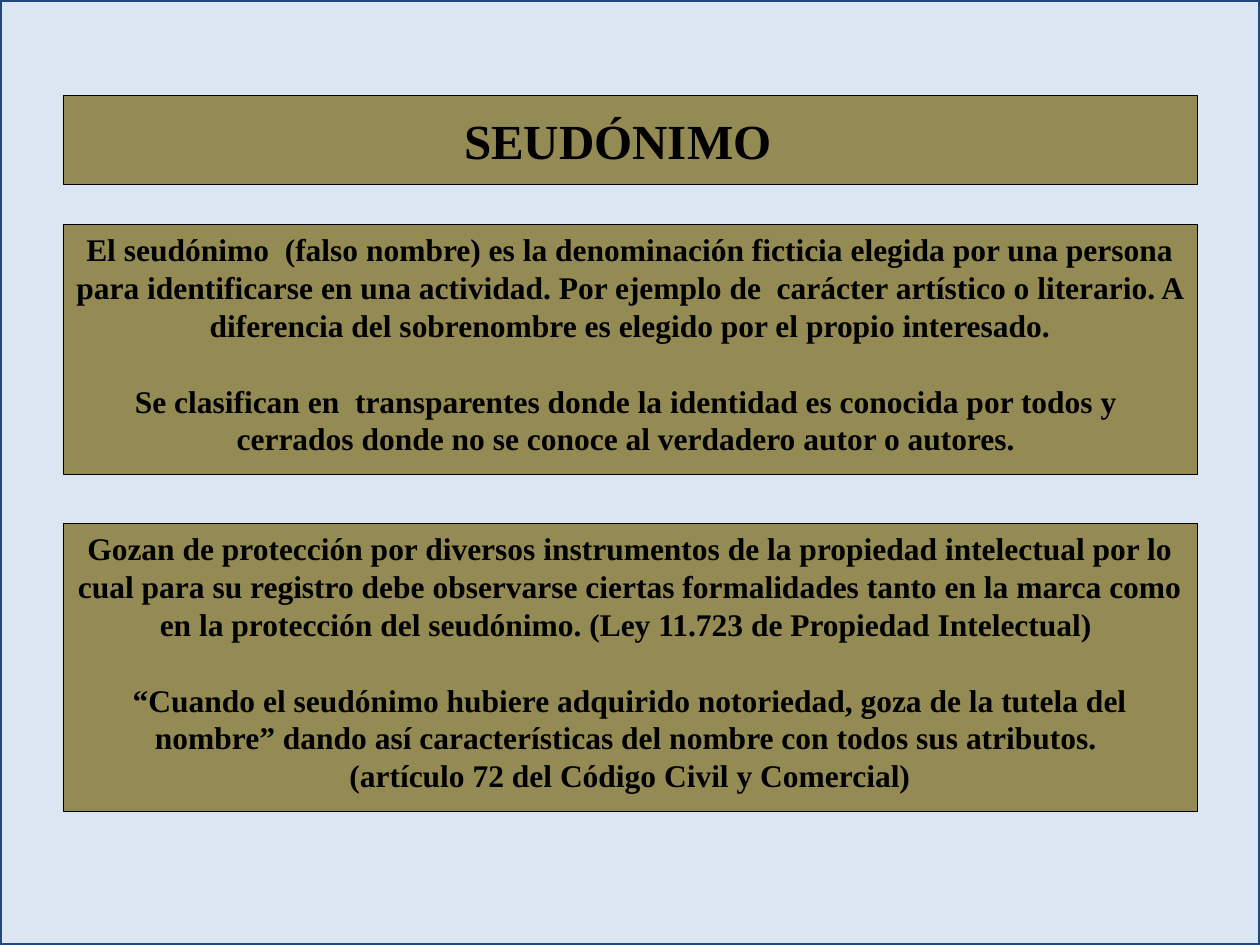
"""Build the slide on the legal notion of pseudonym."""
from dataclasses import dataclass

from pptx import Presentation
from pptx.dml.color import RGBColor
from pptx.enum.shapes import MSO_SHAPE
from pptx.enum.text import MSO_ANCHOR, PP_ALIGN
from pptx.shapes.autoshape import Shape
from pptx.slide import Slide
from pptx.util import Pt


@dataclass(frozen=True)
class Theme:
    backdrop: RGBColor = RGBColor(0xDC, 0xE6, 0xF2)
    frame: RGBColor = RGBColor(0x1F, 0x49, 0x7D)
    panel: RGBColor = RGBColor(0x94, 0x8A, 0x54)
    ink: RGBColor = RGBColor(0, 0, 0)
    font: str = "Times New Roman"
    title_size: float = 28
    body_size: float = 18
    paragraph_gap: float = 21.6


@dataclass(frozen=True)
class Line:
    text: str
    space_before: float = 0


@dataclass(frozen=True)
class Panel:
    top: float
    height: float
    lines: tuple[Line, ...]
    size: float
    anchor: MSO_ANCHOR = MSO_ANCHOR.TOP
    right_inset: float = 7.2


THEME = Theme()
PAGE_WIDTH, PAGE_HEIGHT = 720, 540
MARGIN = 36

PANELS = (
    Panel(54.5, 50.7, (Line("SEUDÓNIMO"),), THEME.title_size, MSO_ANCHOR.MIDDLE, 21.2),
    Panel(128.1, 143, (
        Line("El seudónimo  (falso nombre) es la denominación ficticia elegida por una "
             "persona para identificarse en una actividad. Por ejemplo de  carácter "
             "artístico o literario. A diferencia del sobrenombre es elegido por el "
             "propio interesado."),
        Line("Se clasifican en  transparentes donde la identidad es conocida por todos y  "
             "cerrados donde no se conoce al verdadero autor o autores. ",
             THEME.paragraph_gap),
    ), THEME.body_size),
    Panel(299, 164.6, (
        Line("Gozan de protección por diversos instrumentos de la propiedad intelectual "
             "por lo cual para su registro debe observarse ciertas formalidades tanto en "
             "la marca como en la protección del seudónimo. (Ley 11.723 de Propiedad "
             "Intelectual) "),
        Line("“Cuando el seudónimo hubiere adquirido notoriedad, goza de la tutela del "
             "nombre” dando así características del nombre con todos sus atributos. ",
             THEME.paragraph_gap),
        Line("(artículo 72 del Código Civil y Comercial)"),
    ), THEME.body_size),
)


def add_rectangle(page: Slide, left: float, top: float, width: float, height: float, *,
                  fill: RGBColor, line: RGBColor, line_width: float) -> Shape:
    box = page.shapes.add_shape(MSO_SHAPE.RECTANGLE, Pt(left), Pt(top), Pt(width), Pt(height))
    box.shadow.inherit = False
    box.fill.solid()
    box.fill.fore_color.rgb = fill
    box.line.color.rgb = line
    box.line.width = Pt(line_width)
    return box


def write_line(box: Shape, index: int, text: str, *, size: float, space_before: float) -> None:
    frame = box.text_frame
    para = frame.add_paragraph() if index else frame.paragraphs[0]
    para.alignment = PP_ALIGN.CENTER
    para.space_before = Pt(space_before)
    span = para.add_run()
    span.text = text
    span.font.name = THEME.font
    span.font.size = Pt(size)
    span.font.bold = True
    span.font.color.rgb = THEME.ink


def add_panel(page: Slide, panel: Panel) -> None:
    box = add_rectangle(page, MARGIN, panel.top, PAGE_WIDTH - 2 * MARGIN, panel.height,
                        fill=THEME.panel, line=THEME.ink, line_width=0.25)
    box.text_frame.word_wrap = True
    box.text_frame.vertical_anchor = panel.anchor
    box.text_frame.margin_right = Pt(panel.right_inset)
    for index, line in enumerate(panel.lines):
        write_line(box, index, line.text, size=panel.size, space_before=line.space_before)


def main() -> None:
    deck = Presentation()
    deck.slide_width, deck.slide_height = Pt(PAGE_WIDTH), Pt(PAGE_HEIGHT)
    page = deck.slides.add_slide(deck.slide_layouts[6])
    add_rectangle(page, 0, 0, PAGE_WIDTH, PAGE_HEIGHT,
                  fill=THEME.backdrop, line=THEME.frame, line_width=2)
    for panel in PANELS:
        add_panel(page, panel)
    deck.save("out.pptx")


if __name__ == "__main__":
    main()
